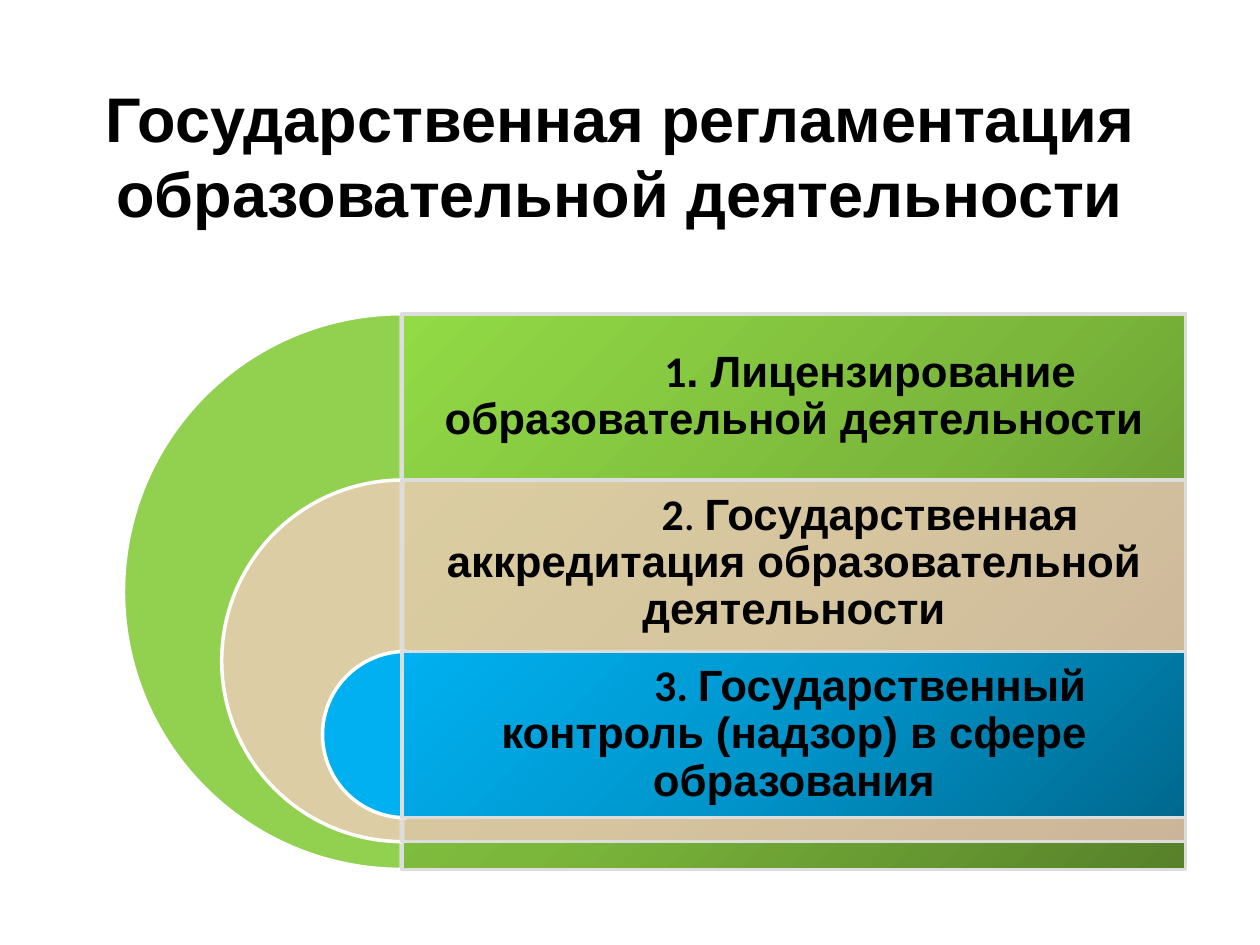
from lxml import etree
from pptx import Presentation
from pptx.dml.color import RGBColor
from pptx.enum.shapes import MSO_SHAPE
from pptx.enum.text import MSO_ANCHOR, PP_ALIGN
from pptx.oxml.ns import qn
from pptx.util import Inches, Pt

COLORS = {
    "text": "000000",
    "arc_line": "FFFFFF",
    "band_line": "DDDDDD",
    "green": "92D050",
    "pink": "FFCCCC",
    "blue": "00B0F0",
}
GREEN_STOPS = ("57812A", "7BB73B", "92DA46")
BLUE_STOPS = ("00688E", "0094CA", "00B0F0")

BAND_LEFT, BAND_WIDTH, LABEL_HEIGHT = 3.19, 6.22, 1.32

# Arc left, top, size, arc colour, opacity in percent, band gradient, label runs (text, font, bold)
LEVELS = [
    (0.98, 2.49, 4.41, "green", 100, GREEN_STOPS,
     [("\t1", "Calibri", True),
      (". Лицензирование образовательной деятельности", "Arial", True)]),
    (1.76, 3.81, 2.87, "pink", 69, None,
     [("\t", "Calibri", False), ("2", "Calibri", True), (". ", "Calibri", False),
      ("Государственная аккредитация образовательной деятельности", "Arial", True)]),
    (2.56, 5.17, 1.32, "blue", 100, BLUE_STOPS,
     [("\t3. ", "Calibri", True),
      ("Государственный контроль (надзор) в сфере образования", "Arial", True)]),
]


def add_text(slide, runs, left, top, width, height, *, size, spacing=1.0,
             inset=0.1, bottom=0.1, tab=1.0):
    box = slide.shapes.add_textbox(Inches(left), Inches(top), Inches(width), Inches(height))
    frame = box.text_frame
    frame.word_wrap = True
    frame.vertical_anchor = MSO_ANCHOR.MIDDLE
    frame.margin_left = frame.margin_right = frame.margin_top = Inches(inset)
    frame.margin_bottom = Inches(bottom)
    paragraph = frame.paragraphs[0]
    paragraph.alignment = PP_ALIGN.CENTER
    paragraph.line_spacing = spacing
    paragraph._p.get_or_add_pPr().set("defTabSz", str(Inches(tab)))
    for text, font, bold in runs:
        run = paragraph.add_run()
        run.text = text
        run.font.name = font
        run.font.size = Pt(size)
        run.font.bold = bold
        run.font.color.rgb = RGBColor.from_string(COLORS["text"])


def add_outlined(slide, kind, left, top, width, height, line, fill, opacity=100):
    shape = slide.shapes.add_shape(kind, Inches(left), Inches(top), Inches(width), Inches(height))
    shape.shadow.inherit = False
    shape.line.color.rgb = RGBColor.from_string(COLORS[line])
    shape.line.width = Pt(2)
    shape.fill.solid()
    shape.fill.fore_color.rgb = RGBColor.from_string(COLORS[fill])
    if opacity < 100:
        color = shape.fill._xPr.find(qn("a:solidFill"))[0]
        etree.SubElement(color, qn("a:alpha"), val=str(opacity * 1000))
    return shape


def set_corner_gradient(shape, stops):
    """Replace the fill with a radial gradient that starts at the bottom right corner."""
    solid = shape.fill._xPr.find(qn("a:solidFill"))
    gradient = etree.Element(qn("a:gradFill"), rotWithShape="1")
    stop_list = etree.SubElement(gradient, qn("a:gsLst"))
    for position, color in zip((0, 50000, 100000), stops):
        stop = etree.SubElement(stop_list, qn("a:gs"), pos=str(position))
        etree.SubElement(stop, qn("a:srgbClr"), val=color)
    radial = etree.SubElement(gradient, qn("a:path"), path="circle")
    etree.SubElement(radial, qn("a:fillToRect"), l="100000", t="100000")
    solid.getparent().replace(solid, gradient)


def add_level(slide, left, top, size, color, opacity, stops, label):
    # Left half of a circle
    arc = add_outlined(slide, MSO_SHAPE.PIE, left, top, size, size, "arc_line", color, opacity)
    arc.adjustments[0] = 54
    arc.adjustments[1] = 162

    # Band to the right of the arc
    band = add_outlined(slide, MSO_SHAPE.RECTANGLE, BAND_LEFT, top, BAND_WIDTH, size,
                        "band_line", color, opacity)
    if stops:
        set_corner_gradient(band, stops)

    # Label in the visible part of the band
    add_text(slide, label, BAND_LEFT, top, BAND_WIDTH, LABEL_HEIGHT,
             size=25, spacing=0.9, tab=1.21)


def main():
    prs = Presentation()
    prs.slide_width, prs.slide_height = Inches(10), Inches(7.5)
    slide = prs.slides.add_slide(prs.slide_layouts[6])

    # Title
    title = "Государственная регламентация образовательной деятельности"
    add_text(slide, [(title, "Arial", True)], 0.67, 0.76, 8.5, 1.61,
             size=36, inset=0.05, bottom=0.72)

    # Nested levels, outermost first
    for level in LEVELS:
        add_level(slide, *level)

    prs.save("out.pptx")


if __name__ == "__main__":
    main()
